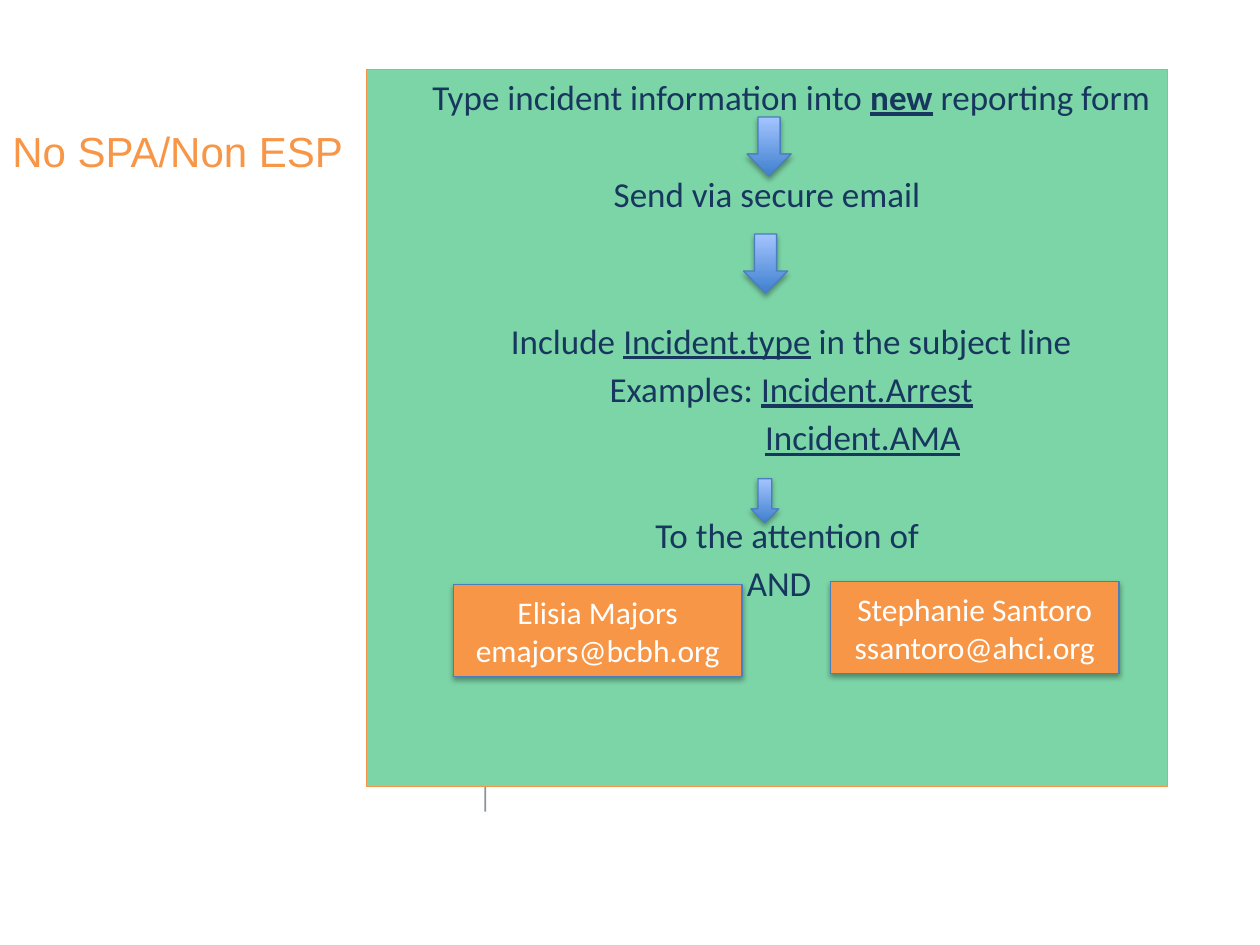
"""Build the incident reporting slide for No SPA/Non ESP."""
from lxml import etree
from pptx import Presentation
from pptx.dml.color import RGBColor
from pptx.enum.shapes import MSO_CONNECTOR as Connector, MSO_SHAPE as Shape
from pptx.enum.text import MSO_ANCHOR as Anchor, PP_ALIGN as Align
from pptx.oxml import parse_xml
from pptx.oxml.ns import nsdecls, qn
from pptx.util import Cm, Pt

ORANGE, GREEN, NAVY, BLUE, WHITE = "F79646", "7CD5A7", "17375E", "4B7EBC", "FFFFFF"
TITLE = "No SPA/Non ESP"
TITLE_AREA = (0, 1.04, 7.26, 2.64)
PANEL_AREA = (7.39, 1.4, 16.15, 14.45)
RULE = (9.78, 16.36, 9.78, 1.65)
LINE_PITCH, LINE_GAP = 28, 3.6

# Each step: empty lines above, left margin in cm, runs as (text, style)
STEPS = [
    (0, 0.97, [("Type incident information into ", ""), ("new", "bu"), (" reporting form", "")]),
    (1, 0, [("Send via secure email", "")]),
    (2, 0.97, [("Include ", ""), ("Incident.type", "u"), (" in the subject line", "")]),
    (0, 0.97, [("Examples: ", ""), ("Incident.Arrest", "u")]),
    (0, 3.86, [("Incident.AMA", "u")]),
    (1, 0.81, [("To the attention of", "")]),
    (0, 0.48, [("AND", "")]),
]
ARROWS = [(15.06, 2.36, 0.89, 1.19), (14.99, 4.72, 0.89, 1.19), (15.14, 9.65, 0.56, 0.89)]
CONTACTS = [
    ((9.14, 11.79, 5.82, 1.85), "Elisia Majors\nemajors@bcbh.org"),
    ((16.74, 11.73, 5.82, 1.85), "Stephanie Santoro\nssantoro@ahci.org"),
]


def color(value):
    return RGBColor.from_string(value)


def set_font(font, name, size, value):
    font.name, font.size = name, Pt(size)
    font.color.rgb = color(value)


def add_box(page, kind, area, line, fill=None):
    box = page.shapes.add_shape(kind, *map(Cm, area))
    box.shadow.inherit = False
    box.line.color.rgb = color(line)
    box.line.width = Pt(0.75)
    if fill:
        box.fill.solid()
        box.fill.fore_color.rgb = color(fill)
    return box


def add_shadow(box):
    effects = box._element.spPr.find(qn("a:effectLst"))
    effects.append(parse_xml(
        f'<a:outerShdw {nsdecls("a")} blurRad="{Pt(3.1)}" dist="{Pt(1.8)}" dir="5400000" '
        'rotWithShape="0"><a:srgbClr val="000000"><a:alpha val="35000"/></a:srgbClr></a:outerShdw>'))


def add_rule(page):
    rule = page.shapes.add_connector(Connector.STRAIGHT, *map(Cm, RULE))
    rule.line.color.rgb = color("112A47")
    rule.line.width = Pt(1)
    properties = rule._element.spPr
    tint = next(properties.iter(qn("a:srgbClr")))
    etree.SubElement(tint, qn("a:alpha")).set("val", "50000")
    etree.SubElement(properties, qn("a:effectLst"))


def add_title(page):
    box = page.shapes.add_textbox(*map(Cm, TITLE_AREA))
    frame = box.text_frame
    frame.word_wrap = True
    frame.margin_right = 0
    frame.vertical_anchor = Anchor.BOTTOM
    frame.text = TITLE
    set_font(frame.paragraphs[0].runs[0].font, "Arial", 24, ORANGE)


def add_panel(page):
    frame = add_box(page, Shape.RECTANGLE, PANEL_AREA, ORANGE, GREEN).text_frame
    frame.word_wrap = True
    frame.vertical_anchor = Anchor.TOP
    for index, (skipped, margin, spans) in enumerate(STEPS):
        para = frame.add_paragraph() if index else frame.paragraphs[0]
        para.alignment = Align.CENTER
        para._p.get_or_add_pPr().set("marL", str(Cm(margin)))
        if index:
            para.space_before = Pt(LINE_GAP + skipped * LINE_PITCH)
        for text, style in spans:
            span = para.add_run()
            span.text = text
            set_font(span.font, "Calibri", 20, NAVY)
            span.font.bold = "b" in style
            span.font.underline = "u" in style


def add_arrow(page, area):
    arrow = add_box(page, Shape.DOWN_ARROW, area, BLUE)
    arrow.fill.gradient()
    arrow.fill.gradient_angle = 90
    for stop, position, value in zip(arrow.fill.gradient_stops, (0, 1), ("3F80CE", "A4C4FF")):
        stop.position = position
        stop.color.rgb = color(value)
    add_shadow(arrow)


def add_contact(page, area, text):
    card = add_box(page, Shape.RECTANGLE, area, BLUE, ORANGE)
    add_shadow(card)
    frame = card.text_frame
    frame.word_wrap = True
    frame.vertical_anchor = Anchor.MIDDLE
    frame.text = text
    for para in frame.paragraphs:
        para.alignment = Align.CENTER
        set_font(para.runs[0].font, "Calibri", 18, WHITE)


def main():
    deck = Presentation()
    deck.slide_width, deck.slide_height = Cm(25.4), Cm(19.05)
    page = deck.slides.add_slide(deck.slide_layouts[6])
    add_rule(page)
    add_title(page)
    add_panel(page)
    for area in ARROWS:
        add_arrow(page, area)
    for area, text in CONTACTS:
        add_contact(page, area, text)
    deck.save("out.pptx")


if __name__ == "__main__":
    main()
